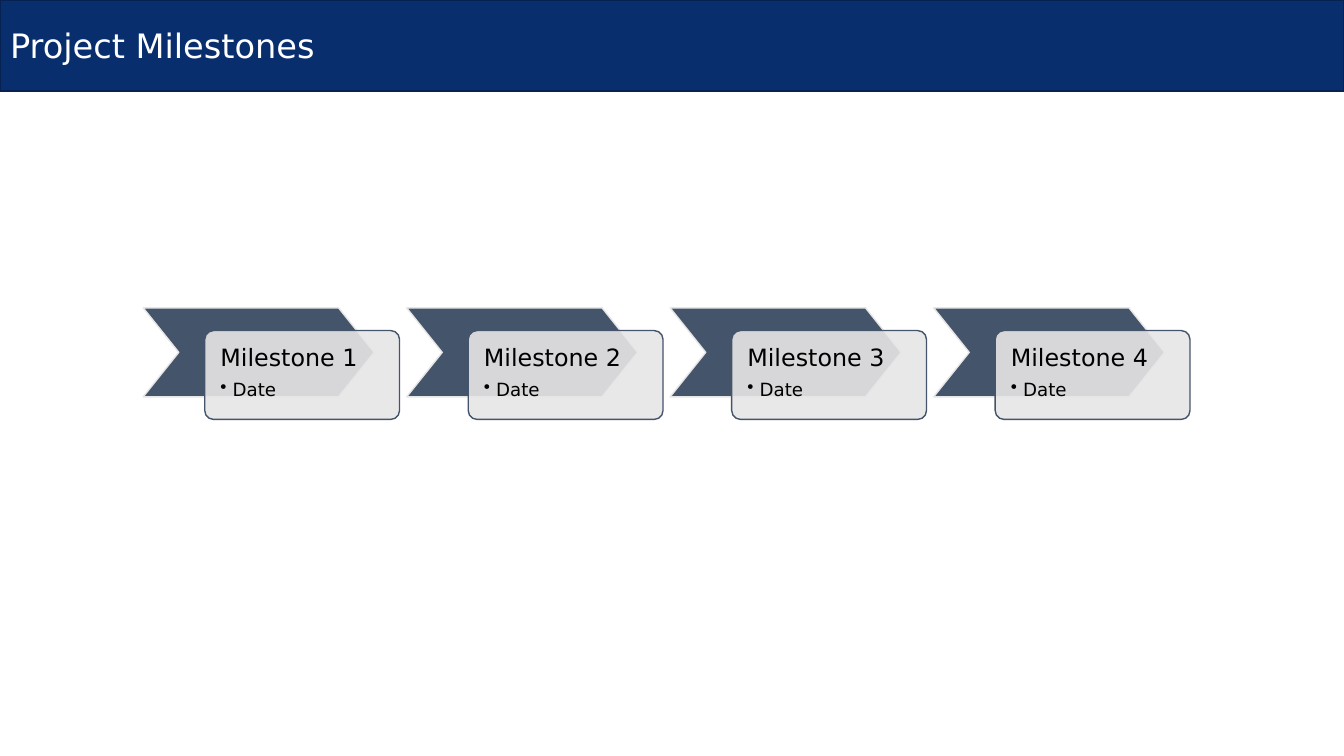
from lxml import etree
from pptx import Presentation
from pptx import util as u
from pptx.dml.color import RGBColor
from pptx.enum import shapes, text
from pptx.oxml import ns

COLOURS = {
    "banner": "092E6E",
    "banner_edge": "072251",
    "slate": "44546A",
    "pale": "E7E6E6",
    "black": "000000",
    "white": "FFFFFF",
}
FONT = "DejaVu Sans"
MILESTONES = [(f"Milestone {number}", "Date") for number in range(1, 5)]


def colour(name):
    return RGBColor.from_string(COLOURS[name])


def paint(shape, fill, line):
    shape.fill.solid()
    shape.fill.fore_color.rgb = colour(fill)
    shape.line.color.rgb = colour(line)
    shape.line.width = u.Pt(1)


def add_run(paragraph, words, size, ink):
    run = paragraph.add_run()
    run.text = words
    run.font.name = FONT
    run.font.size = u.Pt(size)
    run.font.color.rgb = colour(ink)


def add_block(slide, kind, box, adjustment, fill, line):
    shape = slide.shapes.add_shape(kind, *box)
    shape.shadow.inherit = False
    shape.adjustments[0] = adjustment
    paint(shape, fill, line)
    return shape


def set_opacity(shape, percent):
    solid = shape.fill._xPr.find(ns.qn("a:solidFill"))
    etree.SubElement(solid[0], ns.qn("a:alpha"), val=str(percent * 1000))


def set_bullet(paragraph, indent):
    properties = paragraph._p.get_or_add_pPr()
    properties.set("marL", str(indent))
    properties.set("indent", str(-indent))
    etree.SubElement(properties, ns.qn("a:buChar"), char="•")


def build_banner(slide, left, top, width, height):
    title = slide.shapes.title
    title.left, title.top, title.width, title.height = left, top, width, height
    paint(title, "banner", "banner_edge")
    frame = title.text_frame
    frame.word_wrap = True
    frame.vertical_anchor = text.MSO_ANCHOR.MIDDLE
    paragraph = frame.paragraphs[0]
    paragraph.alignment = text.PP_ALIGN.LEFT
    add_run(paragraph, "Project Milestones", 24, "white")


def build_milestone(slide, left, top, width, height, name, date):
    # Arrow behind the card
    add_block(slide, shapes.MSO_SHAPE.CHEVRON, (left, top, width, height),
              0.4, "slate", "pale")

    # Card, shifted right and down from the arrow
    card_box = (left + u.Cm(1.55), top + u.Cm(0.57), u.Cm(4.91), height)
    card = add_block(slide, shapes.MSO_SHAPE.ROUNDED_RECTANGLE, card_box,
                     0.1, "pale", "slate")
    set_opacity(card, 90)

    # Name and bulleted date
    frame = card.text_frame
    frame.word_wrap = True
    frame.vertical_anchor = text.MSO_ANCHOR.TOP
    frame.margin_left = frame.margin_right = u.Cm(0.33)
    frame.margin_top = frame.margin_bottom = u.Cm(0.33)
    heading, detail = frame.paragraphs[0], frame.add_paragraph()
    for paragraph, words, size, gap in ((heading, name, 17, 6), (detail, date, 13, 2)):
        paragraph.alignment = text.PP_ALIGN.LEFT
        paragraph.line_spacing = 0.9
        paragraph.space_after = u.Pt(gap)
        add_run(paragraph, words, size, "black")
    detail.level = 1
    set_bullet(detail, u.Cm(0.31))


def build_timeline(slide, left, top, pitch, height):
    for index, (name, date) in enumerate(MILESTONES):
        build_milestone(slide, left + index * pitch, top, u.Cm(5.82), height, name, date)


def main():
    presentation = Presentation()
    presentation.slide_width = u.Cm(33.87)
    presentation.slide_height = u.Cm(19.05)
    slide = presentation.slides.add_slide(presentation.slide_layouts.get_by_name("Title Only"))
    build_banner(slide, 0, 0, presentation.slide_width, u.Cm(2.29))
    build_timeline(slide, u.Cm(3.61), u.Cm(7.76), u.Cm(6.64), u.Cm(2.24))
    presentation.save("out.pptx")


if __name__ == "__main__":
    main()
